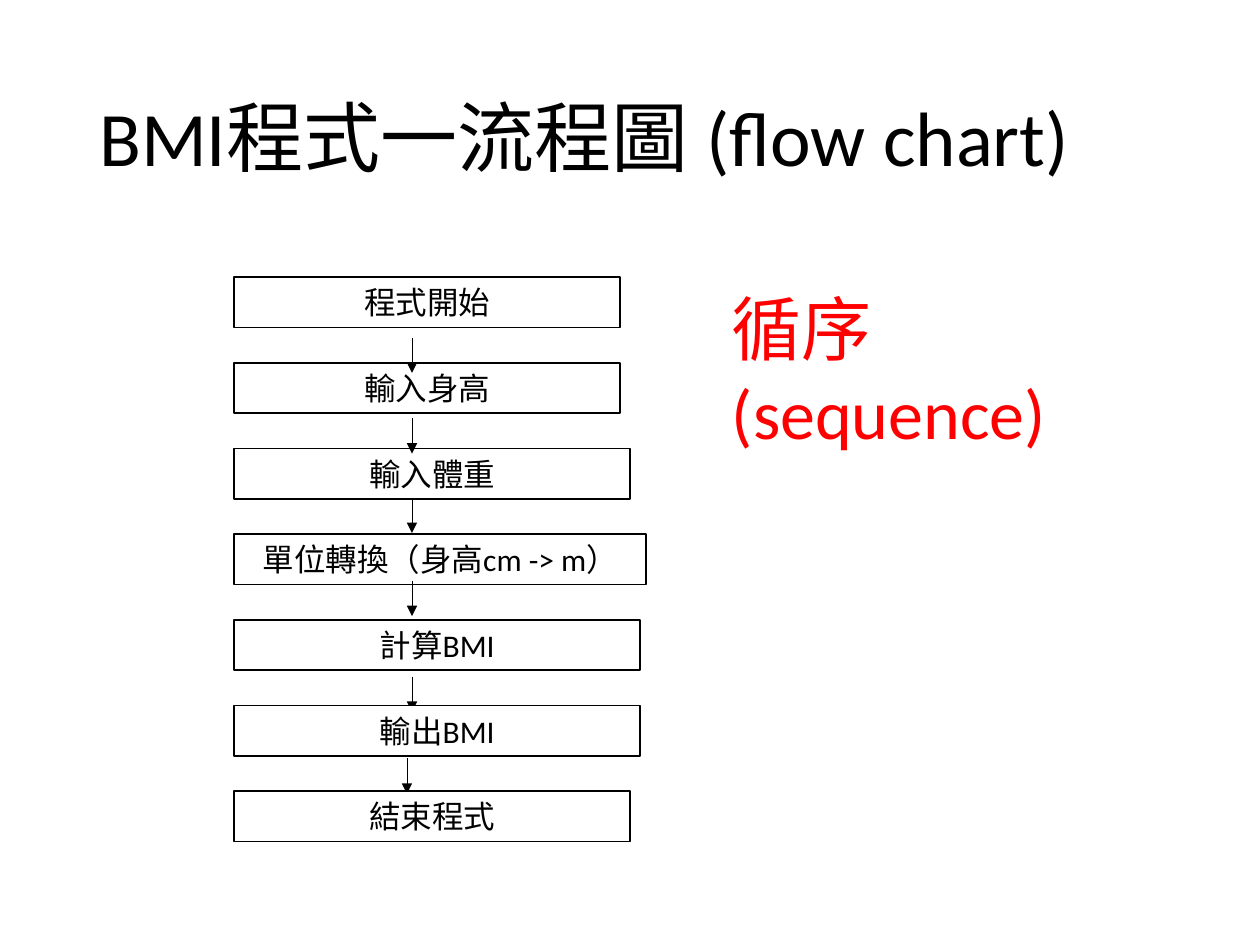
from typing import NamedTuple, Optional

from lxml.etree import SubElement
from pptx import Presentation
from pptx.dml.color import RGBColor
from pptx.enum.shapes import MSO_CONNECTOR, MSO_SHAPE
from pptx.enum.text import MSO_ANCHOR, MSO_AUTO_SIZE, PP_ALIGN
from pptx.oxml.ns import qn
from pptx.util import Inches, Pt

COLORS = {"ink": "000000", "paper": "FFFFFF", "accent": "FF0000"}
FONT = "Calibri"
BOX_LEFT, BOX_TOP, BOX_HEIGHT, PITCH = 1.86, 2.2, 0.4, 0.68
ARROW_LENGTH = 0.28


class Arrow(NamedTuple):
    x: float
    top: float
    in_front: bool = False


class Step(NamedTuple):
    text: str
    width: float
    arrow: Optional[Arrow] = None  # arrow leading into the step


STEPS = [
    Step("程式開始", 3.06),
    Step("輸入身高", 3.06, Arrow(3.27, 2.68, in_front=True)),
    Step("輸入體重", 3.14, Arrow(3.27, 3.32, in_front=True)),
    Step("單位轉換（身高cm -> m）", 3.27, Arrow(3.27, 3.95)),
    Step("計算BMI", 3.22, Arrow(3.27, 4.61)),
    Step("輸出BMI", 3.22, Arrow(3.27, 5.37)),
    Step("結束程式", 3.14, Arrow(3.23, 6.02)),
]


def rgb(name: str) -> RGBColor:
    return RGBColor.from_string(COLORS[name])


def write(sp, text: str, *, size: float, color: str = "ink",
          align=PP_ALIGN.LEFT, anchor=MSO_ANCHOR.TOP,
          spacing: float = 1.0, grow: bool = True) -> None:
    tf = sp.text_frame
    tf.word_wrap = True
    tf.vertical_anchor = anchor
    tf.auto_size = MSO_AUTO_SIZE.SHAPE_TO_FIT_TEXT if grow else MSO_AUTO_SIZE.NONE
    p = tf.paragraphs[0]
    p.alignment = align
    p.line_spacing = spacing
    r = p.add_run()
    r.text = text
    r.font.name = FONT
    r.font.size = Pt(size)
    r.font.color.rgb = rgb(color)


def add_text_box(slide, left: float, top: float, width: float, height: float):
    return slide.shapes.add_textbox(
        Inches(left), Inches(top), Inches(width), Inches(height))


def draw_step(slide, step: Step, top: float) -> None:
    sp = slide.shapes.add_shape(
        MSO_SHAPE.RECTANGLE, Inches(BOX_LEFT), Inches(top),
        Inches(step.width), Inches(BOX_HEIGHT))
    sp.shadow.inherit = False
    sp.fill.solid()
    sp.fill.fore_color.rgb = rgb("paper")
    sp.line.color.rgb = rgb("ink")
    sp.line.width = Pt(1)
    write(sp, step.text, size=18, align=PP_ALIGN.CENTER)


def draw_arrow(slide, arrow: Arrow) -> None:
    x = Inches(arrow.x)
    line = slide.shapes.add_connector(
        MSO_CONNECTOR.STRAIGHT, x, Inches(arrow.top),
        x, Inches(arrow.top + ARROW_LENGTH))
    line.line.color.rgb = rgb("ink")
    line.line.width = Pt(0.5)
    SubElement(line.line._get_or_add_ln(), qn("a:tailEnd"), type="triangle")
    SubElement(line._element.spPr, qn("a:effectLst"))


def main() -> None:
    prs = Presentation()
    prs.slide_width, prs.slide_height = Inches(10), Inches(7.5)
    slide = prs.slides.add_slide(prs.slide_layouts[6])

    # Title
    title = add_text_box(slide, 0.69, 0.4, 8.62, 1.45)
    write(title, "BMI程式一流程圖 (flow chart)", size=44,
          anchor=MSO_ANCHOR.MIDDLE, spacing=0.9, grow=False)

    # Flow chart: boxes cover the tips of the arrows behind them
    for i, step in enumerate(STEPS):
        if step.arrow and not step.arrow.in_front:
            draw_arrow(slide, step.arrow)
        draw_step(slide, step, BOX_TOP + i * PITCH)

    # Name of the control structure, wrapped before the bracket
    label = add_text_box(slide, 5.71, 2.22, 3.84, 0.77)
    label.text_frame.margin_right = Inches(0.4)
    write(label, "循序(sequence)", size=40, color="accent")

    # Arrows lying over the boxes
    for step in STEPS:
        if step.arrow and step.arrow.in_front:
            draw_arrow(slide, step.arrow)

    prs.save("out.pptx")


if __name__ == "__main__":
    main()
